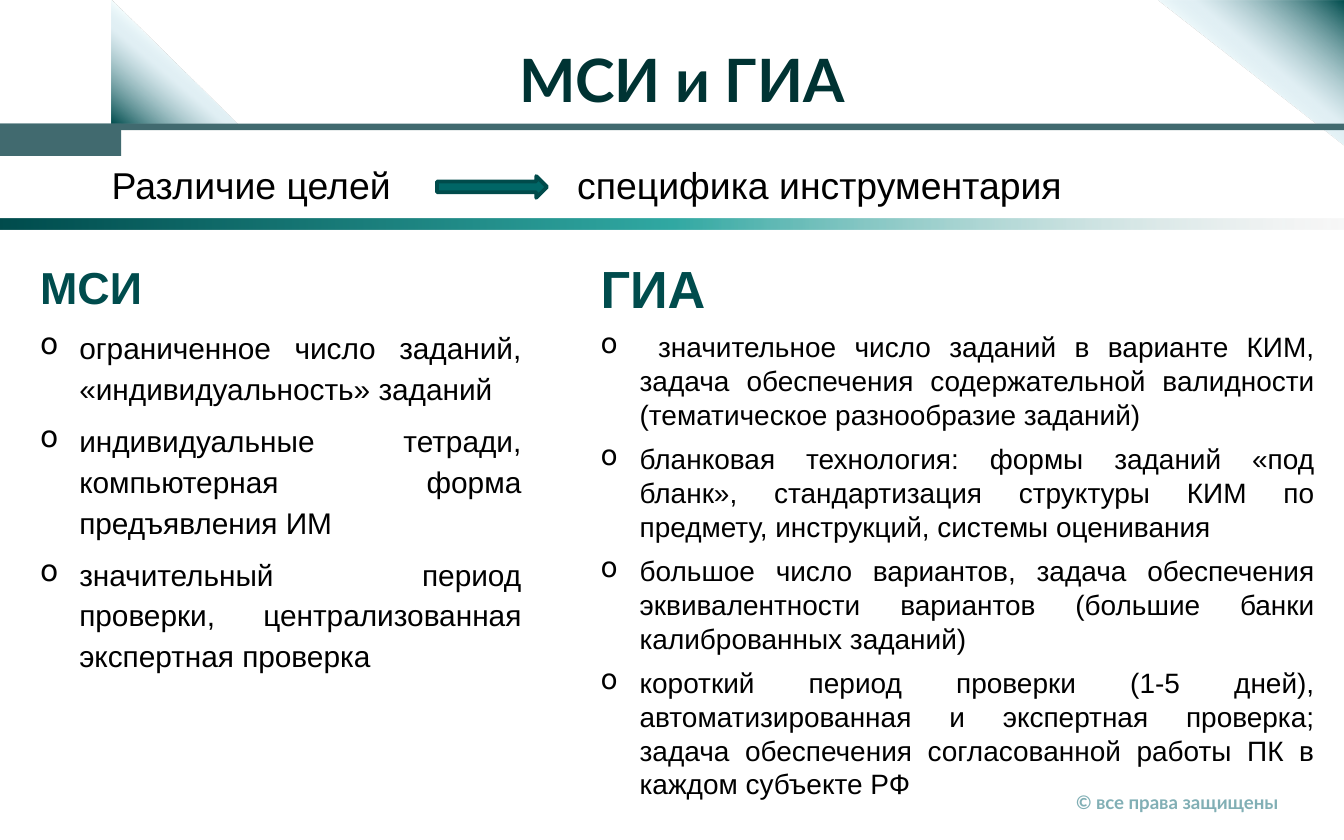
from pptx import Presentation
from pptx.dml.color import RGBColor
from pptx.enum.shapes import MSO_SHAPE
from pptx.enum.text import MSO_ANCHOR, PP_ALIGN
from pptx.oxml import parse_xml
from pptx.oxml.ns import nsdecls, qn
from pptx.util import Cm, Pt

RECTANGLE, TRIANGLE = MSO_SHAPE.RECTANGLE, MSO_SHAPE.RIGHT_TRIANGLE
RIGHT_ARROW = MSO_SHAPE.RIGHT_ARROW
LEFT, CENTER, JUSTIFY = PP_ALIGN.LEFT, PP_ALIGN.CENTER, PP_ALIGN.JUSTIFY
TOP, MIDDLE = MSO_ANCHOR.TOP, MSO_ANCHOR.MIDDLE

BLACK = RGBColor(0x00, 0x00, 0x00)
DARK_GREEN = RGBColor(0x00, 0x33, 0x33)
GREEN = RGBColor(0x00, 0x4C, 0x4D)
ARROW_FILL = RGBColor(0x00, 0x66, 0x66)
ARROW_LINE = RGBColor(0x00, 0x4B, 0x4B)
SLATE = RGBColor(0x41, 0x6A, 0x6F)
PALE_TEAL = RGBColor(0x81, 0xAF, 0xB5)
ICE = RGBColor(0xF7, 0xFF, 0xFF)
PALE_BLUE = RGBColor(0xC4, 0xE0, 0xEA)
TURQUOISE = RGBColor(0x31, 0xA9, 0xA3)
LIGHT_GREY = RGBColor(0xD9, 0xD9, 0xD9)

# Gradient stops: position %, colour, opacity %
CORNER_STOPS = [(46, ICE, 100), (58, PALE_BLUE, 50), (100, GREEN, 100), (100, DARK_GREEN, 100)]
DIVIDER_STOPS = [(0, DARK_GREEN, 73), (0, GREEN, 100), (50, TURQUOISE, 100), (100, LIGHT_GREY, 18)]

# Boxes are left, top, width, height in cm
CORNERS = [((22.28, -0.38, 2.74, 3.51), 270), ((2.13, -0.03, 2.34, 2.39), 90)]
BARS = [(0, 2.34, 25.4, 0.12), (0, 2.34, 2.29, 0.61)]
DIVIDER = (0, 4.14, 25.4, 0.2)
ARROW = (8.26, 3.33, 2.08, 0.41)

TITLE_FONT = {"name": "Lato", "size": Pt(32), "bold": True}
COPYRIGHT_FONT = {"name": "Lato", "size": Pt(10), "bold": True}
GOAL_FONT = {"name": "Arial", "size": Pt(20)}
LABELS = [
    ("© все права защищены", (20.09, 14.83, 4.93, 0.69), COPYRIGHT_FONT, PALE_TEAL, LEFT, TOP),
    ("МСИ и ГИА", (1.27, 0.64, 23.24, 1.7), TITLE_FONT, DARK_GREEN, CENTER, MIDDLE),
    ("Различие целей", (1.86, 2.95, 6, 1.12), GOAL_FONT, BLACK, LEFT, TOP),
    ("специфика инструментария", (10.66, 2.95, 10.5, 1.12), GOAL_FONT, BLACK, LEFT, TOP),
]

HEADING_SPACING = 1.14
COLUMNS = [
    {
        "heading": "МСИ", "box": (0.51, 4.65, 9.6, 10.31),
        "heading_size": 24, "size": 16, "spacing": 1.14,
        "items": [
            "ограниченное число заданий, «индивидуальность» заданий",
            "индивидуальные тетради, компьютерная форма предъявления ИМ",
            "значительный период проверки, централизованная экспертная проверка",
        ],
    },
    {
        "heading": "ГИА", "box": (11.1, 4.55, 14, 9.91),
        "heading_size": 28, "size": 15, "spacing": 1.0,
        "items": [
            " значительное число заданий в варианте КИМ, задача обеспечения "
            "содержательной валидности (тематическое разнообразие заданий)",
            "бланковая технология: формы заданий «под бланк», стандартизация "
            "структуры КИМ по предмету, инструкций, системы оценивания",
            "большое число вариантов, задача обеспечения эквивалентности "
            "вариантов (большие банки калиброванных заданий)",
            "короткий период проверки (1-5 дней), автоматизированная и экспертная "
            "проверка; задача обеспечения согласованной работы ПК в каждом субъекте РФ",
        ],
    },
]


def add_plain_shape(slide, kind, box, color):
    shape = slide.shapes.add_shape(kind, *map(Cm, box))
    shape.shadow.inherit = False
    shape.fill.solid()
    shape.fill.fore_color.rgb = color
    shape.line.fill.background()
    return shape


def add_gradient_shape(slide, kind, box, stops, angle):
    shape = add_plain_shape(slide, kind, box, GREEN)
    stop_xml = "".join(
        f'<a:gs pos="{position * 1000}"><a:srgbClr val="{color}">'
        f'<a:alpha val="{opacity * 1000}"/></a:srgbClr></a:gs>'
        for position, color, opacity in stops
    )
    gradient = parse_xml(
        f'<a:gradFill {nsdecls("a")} rotWithShape="1"><a:gsLst>{stop_xml}</a:gsLst>'
        f'<a:lin ang="{angle * 60000}" scaled="0"/></a:gradFill>'
    )
    properties = shape._element.spPr
    properties.replace(properties.find(qn("a:solidFill")), gradient)
    return shape


def add_text_frame(slide, box, anchor=TOP):
    frame = slide.shapes.add_textbox(*map(Cm, box)).text_frame
    frame.word_wrap = True
    frame.vertical_anchor = anchor
    return frame


def write_paragraph(paragraph, text, font, color, **layout):
    run = paragraph.add_run()
    run.text = text
    for name, value in font.items():
        setattr(run.font, name, value)
    run.font.color.rgb = color
    for name, value in layout.items():
        setattr(paragraph, name, value)


def add_bullet(paragraph):
    properties = paragraph._p.get_or_add_pPr()
    properties.set("marL", str(Cm(0.74)))
    properties.set("indent", str(-Cm(0.74)))
    properties.append(parse_xml(f'<a:buChar {nsdecls("a")} char="o"/>'))


def add_column(slide, column):
    frame = add_text_frame(slide, column["box"])
    heading_font = {"name": "Arial", "size": Pt(column["heading_size"]), "bold": True}
    write_paragraph(frame.paragraphs[0], column["heading"], heading_font, GREEN,
                    line_spacing=HEADING_SPACING)
    for item in column["items"]:
        paragraph = frame.add_paragraph()
        add_bullet(paragraph)
        write_paragraph(paragraph, item, {"name": "Arial", "size": Pt(column["size"])}, BLACK,
                        alignment=JUSTIFY, line_spacing=column["spacing"], space_before=Pt(6))


def main():
    presentation = Presentation()
    presentation.slide_width, presentation.slide_height = Cm(25.4), Cm(15.88)
    slide = presentation.slides.add_slide(presentation.slide_layouts[6])

    for box, rotation in CORNERS:
        corner = add_gradient_shape(slide, TRIANGLE, box, CORNER_STOPS, 140)
        corner.rotation = rotation
        corner._element.spPr.xfrm.set("flipH", "1")
    for box in BARS:
        add_plain_shape(slide, RECTANGLE, box, SLATE)
    add_gradient_shape(slide, RECTANGLE, DIVIDER, DIVIDER_STOPS, 0)

    for text, box, font, color, alignment, anchor in LABELS:
        frame = add_text_frame(slide, box, anchor)
        write_paragraph(frame.paragraphs[0], text, font, color, alignment=alignment)
    for column in COLUMNS:
        add_column(slide, column)

    arrow = add_plain_shape(slide, RIGHT_ARROW, ARROW, ARROW_FILL)
    arrow.line.color.rgb = ARROW_LINE
    arrow.line.width = Pt(2)

    presentation.save("out.pptx")


if __name__ == "__main__":
    main()
